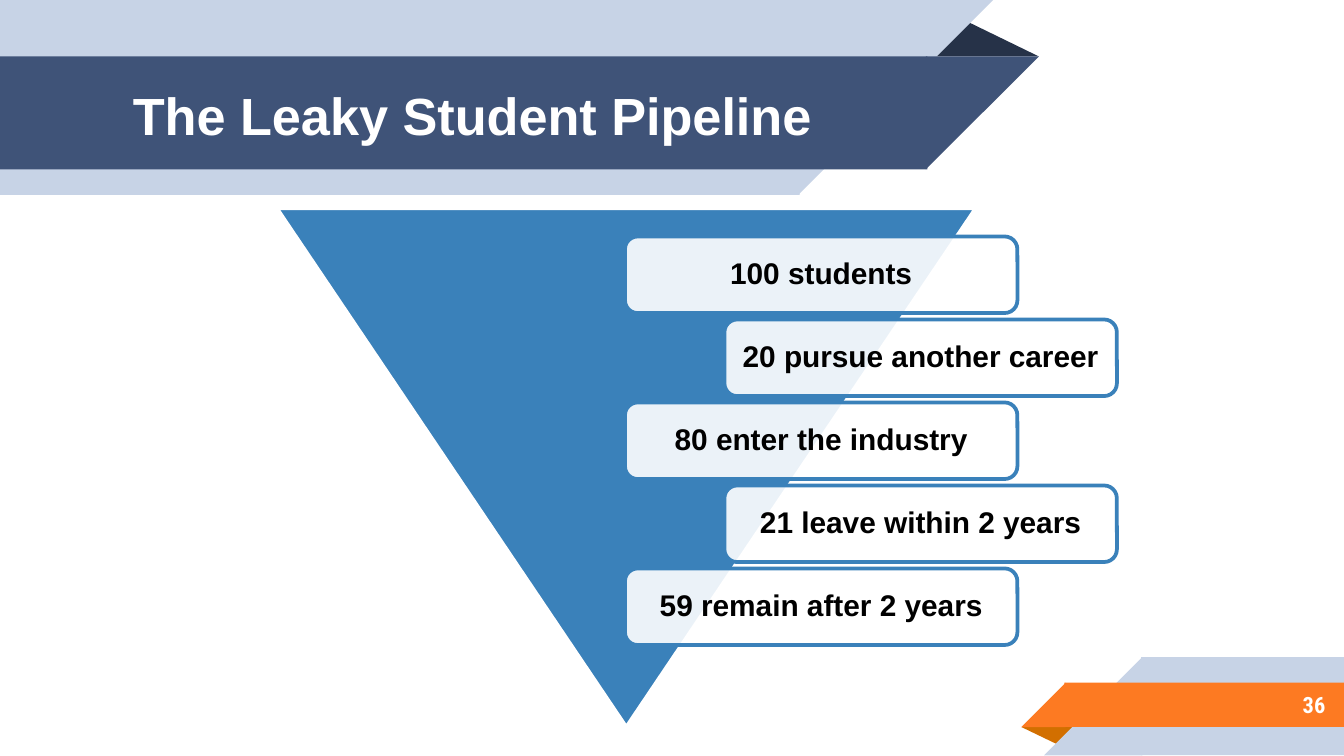
from dataclasses import dataclass

from lxml import etree
from pptx import Presentation
from pptx import util as u
from pptx.dml.color import RGBColor
from pptx.enum import shapes, text
from pptx.oxml import ns


@dataclass(frozen=True)
class Theme:
    """Colours, fonts and type sizes of the slide."""
    pale: str = "C7D3E6"
    navy: str = "3F5378"
    navy_fold: str = "263248"
    orange: str = "FD7A22"
    orange_fold: str = "D26F00"
    blue: str = "3A81BA"
    white: str = "FFFFFF"
    black: str = "000000"
    font: str = "Arial"
    number_font: str = "Roboto Condensed"
    title_size: int = 28
    label_size: int = 16
    number_size: int = 12


THEME = Theme()
KIND = shapes.MSO_SHAPE
ALIGN = text.PP_ALIGN
OVERLAP = 0.01


def add_block(slide, kind, box, fill, line=None, flip=None, rotation=0):
    """Add a flat preset shape, optionally outlined, flipped or rotated."""
    shape = slide.shapes.add_shape(kind, *map(u.Inches, box))
    shape.shadow.inherit = False
    shape.fill.solid()
    shape.fill.fore_color.rgb = RGBColor.from_string(fill)
    if line:
        shape.line.color.rgb = RGBColor.from_string(line)
        shape.line.width = u.Pt(2)
    else:
        shape.line.fill.background()
    shape.rotation = rotation
    if flip:
        shape._element.spPr.get_or_add_xfrm().set(flip, "1")
    return shape


def write_text(shape, words, size, color, font=THEME.font, align=ALIGN.LEFT, inset=0.1):
    """Write one bold, vertically centred line into a shape."""
    frame = shape.text_frame
    frame.word_wrap = True
    frame.vertical_anchor = text.MSO_ANCHOR.MIDDLE
    frame.margin_left = frame.margin_right = u.Inches(inset)
    frame.margin_top = frame.margin_bottom = u.Inches(inset)
    paragraph = frame.paragraphs[0]
    paragraph.alignment = align
    run = paragraph.add_run()
    run.text = words
    run.font.size = u.Pt(size)
    run.font.name = font
    run.font.bold = True
    run.font.color.rgb = RGBColor.from_string(color)
    return paragraph


def add_text_box(slide, box, *args, **options):
    """Add a text box holding one line."""
    write_text(slide.shapes.add_textbox(*map(u.Inches, box)), *args, **options)


def add_fold(slide, box, fill, rotation=0):
    """Add the dark triangle behind a ribbon."""
    shape = add_block(slide, KIND.ISOSCELES_TRIANGLE, box, fill, rotation=rotation)
    shape.adjustments[0] = 0.324


def add_header_band(slide, top, width, height, fill):
    """Add a band from the left edge with a slanted right end."""
    add_block(slide, KIND.RECTANGLE, (0, top, width + OVERLAP, height), fill)
    add_block(slide, KIND.RIGHT_TRIANGLE, (width, top, height, height), fill, flip="flipV")


def add_footer_band(slide, left, top, height, fill):
    """Add a band to the right edge with a slanted left end."""
    add_block(slide, KIND.RECTANGLE, (left - OVERLAP, top, 10 - left + OVERLAP, height), fill)
    add_block(slide, KIND.RIGHT_TRIANGLE, (left - height, top, height, height), fill, flip="flipH")


def add_label(slide, left, top, words):
    """Add a translucent rounded label."""
    shape = add_block(slide, KIND.ROUNDED_RECTANGLE, (left, top, 2.92, 0.57),
                      THEME.white, line=THEME.blue)
    color = shape._element.spPr.find(ns.qn("a:solidFill"))[0]
    etree.SubElement(color, ns.qn("a:alpha"), val="90000")
    paragraph = write_text(shape, words, THEME.label_size, THEME.black,
                           align=ALIGN.CENTER, inset=0.07)
    paragraph.line_spacing = 0.9


def add_pipeline(slide, stages):
    """Add the inverted triangle and its staggered labels."""
    add_block(slide, KIND.ISOSCELES_TRIANGLE, (2.06, 1.55, 5.2, 3.86),
              THEME.blue, line=THEME.white, rotation=180)
    step = 2.47 / (len(stages) - 1)
    for index, words in enumerate(stages):
        add_label(slide, 4.65 + 0.74 * (index % 2), 1.76 + step * index, words)


def main():
    """Build and save the slide."""
    presentation = Presentation()
    presentation.slide_width = u.Inches(10)
    presentation.slide_height = u.Inches(10 * 9 / 16)
    slide = presentation.slides.add_slide(presentation.slide_layouts[6])

    add_fold(slide, (6.88, 0.14, 0.85, 0.28), THEME.navy_fold)
    add_header_band(slide, 0, 5.94, 1.45, THEME.pale)
    add_header_band(slide, 0.42, 6.89, 0.84, THEME.navy)
    add_fold(slide, (7.6, 5.41, 0.43, 0.14), THEME.orange_fold, rotation=180)
    add_footer_band(slide, 8.5, 4.89, 0.73, THEME.pale)
    add_footer_band(slide, 7.93, 5.08, 0.33, THEME.orange)

    add_text_box(slide, (0.89, 0.43, 6.01, 0.84), "The Leaky Student Pipeline",
                 THEME.title_size, THEME.white)
    add_text_box(slide, (8.33, 5.07, 1.63, 0.35), "36", THEME.number_size,
                 THEME.white, font=THEME.number_font, align=ALIGN.RIGHT)
    add_pipeline(slide, ["100 students", "20 pursue another career",
                         "80 enter the industry", "21 leave within 2 years",
                         "59 remain after 2 years"])
    presentation.save("out.pptx")


if __name__ == "__main__":
    main()
